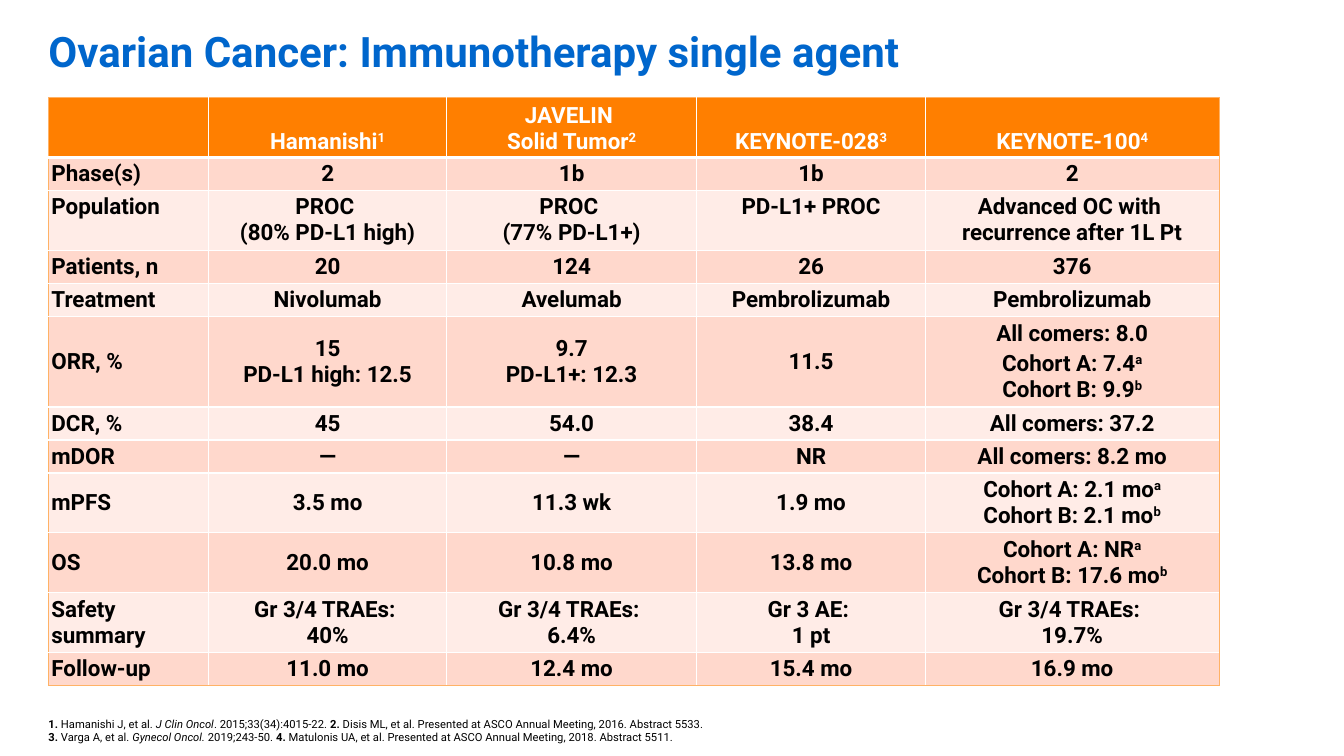
"""Build the slide on single-agent immunotherapy trials in ovarian cancer."""
from dataclasses import dataclass

import lxml.etree
import pptx
import pptx.dml.color
import pptx.enum.text
import pptx.oxml.ns
import pptx.util
from pptx.dml.color import RGBColor
from pptx.enum.text import MSO_ANCHOR, PP_ALIGN
from pptx.util import Inches, Pt

BLUE = RGBColor(0x00, 0x66, 0xCC)
ORANGE = RGBColor(0xFF, 0x7F, 0x00)
LIGHT_ORANGE = RGBColor(0xFF, 0xB2, 0x66)
PINK = RGBColor(0xFF, 0xD8, 0xCC)
PALE_PINK = RGBColor(0xFF, 0xEC, 0xE7)
WHITE = RGBColor(0xFF, 0xFF, 0xFF)
BLACK = RGBColor(0x00, 0x00, 0x00)
FONT = "Roboto"
MARGIN = 0.48
COL_WIDTHS = (1.59, 2.36, 2.48, 2.27, 2.91)


@dataclass(frozen=True)
class Span:
    text: str
    bold: bool = False
    italic: bool = False
    raised: bool = False


@dataclass(frozen=True)
class Row:
    height: float
    cells: tuple[str, ...]
    anchor: MSO_ANCHOR = MSO_ANCHOR.MIDDLE


@dataclass(frozen=True)
class Box:
    left: float
    top: float
    width: float
    height: float
    anchor: MSO_ANCHOR


@dataclass(frozen=True)
class Border:
    color: RGBColor
    width: float


INNER = Border(WHITE, 1)
OUTER = Border(LIGHT_ORANGE, 0.5)
HEADER_RULE = Border(WHITE, 3)

ROWS = (
    Row(0.54, ("", "Hamanishi|1", "JAVELIN \nSolid Tumor|2", "KEYNOTE-028|3",
               "KEYNOTE-100|4"), MSO_ANCHOR.BOTTOM),
    Row(0.31, ("Phase(s)", "2", "1b", "1b", "2"), MSO_ANCHOR.TOP),
    Row(0.54, ("Population", "PROC \n(80% PD-L1 high)", "PROC \n(77% PD-L1+)",
               "PD-L1+ PROC", "Advanced OC with \nrecurrence after 1L Pt"), MSO_ANCHOR.TOP),
    Row(0.31, ("Patients, n", "20", "124", "26", "376")),
    Row(0.31, ("Treatment", "Nivolumab", "Avelumab", "Pembrolizumab", "Pembrolizumab")),
    Row(0.83, ("ORR, %", "15\nPD-L1 high: 12.5", "9.7\nPD-L1+: 12.3", "11.5",
               "All comers: 8.0¶Cohort A: 7.4|a\n|Cohort B: 9.9|b")),
    Row(0.31, ("DCR, %", "45", "54.0", "38.4", "All comers: 37.2")),
    Row(0.31, ("mDOR", "—", "—", "NR", "All comers: 8.2 mo")),
    Row(0.54, ("mPFS", "3.5 mo", "11.3 wk", "1.9 mo",
               "Cohort A: 2.1 mo|a\n|Cohort B: 2.1 mo|b")),
    Row(0.54, ("OS", "20.0 mo", "10.8 mo", "13.8 mo",
               "Cohort A: NR|a\n|Cohort B: 17.6 mo|b")),
    Row(0.54, ("Safety summary", "Gr 3/4 TRAEs: \n40%", "Gr 3/4 TRAEs: \n6.4%",
               "Gr 3 AE: \n1 pt", "Gr 3/4 TRAEs: \n19.7%")),
    Row(0.31, ("Follow-up", "11.0 mo", "12.4 mo", "15.4 mo", "16.9 mo")),
)

REFERENCES = (
    Span("1. ", bold=True),
    Span("Hamanishi J, et al. "),
    Span("J Clin Oncol", italic=True),
    Span(". 2015;33(34):4015-22. "),
    Span("2. ", bold=True),
    Span("Disis ML, et al. Presented at ASCO Annual Meeting, 2016. Abstract 5533. \n"),
    Span("3. ", bold=True),
    Span("Varga A, et al. "),
    Span("Gynecol Oncol. ", italic=True),
    Span("2019;243-50. "),
    Span("4. ", bold=True),
    Span("Matulonis UA, et al. Presented at ASCO Annual Meeting, 2018. Abstract 5511."),
)


def write_spans(p, spans: tuple[Span, ...], size: float, color: RGBColor) -> None:
    for span in spans:
        for i, line in enumerate(span.text.split("\n")):
            if i:
                p.add_line_break()
            if not line:
                continue
            r = p.add_run()
            r.text = line
            r.font.name, r.font.size = FONT, Pt(size)
            r.font.bold, r.font.italic = span.bold, span.italic
            r.font.color.rgb = color
            if span.raised:
                r.font._element.set("baseline", "30000")
    for br in p._p.findall(pptx.oxml.ns.qn("a:br")):
        lxml.etree.SubElement(br, pptx.oxml.ns.qn("a:rPr"), sz=str(int(size * 100)))


def marked_spans(text: str) -> tuple[Span, ...]:
    return tuple(Span(part, bold=True, raised=i % 2 == 1)
                 for i, part in enumerate(text.split("|")))


def set_border(cell, side: str, border: Border) -> None:
    qn = pptx.oxml.ns.qn
    ln = lxml.etree.SubElement(cell._tc.get_or_add_tcPr(), qn(f"a:ln{side}"),
                               w=str(Pt(border.width)))
    fill = lxml.etree.SubElement(ln, qn("a:solidFill"))
    lxml.etree.SubElement(fill, qn("a:srgbClr"), val=str(border.color))


def fill_cell(cell, row: int, col: int) -> None:
    header, last_row = row == 0, row == len(ROWS) - 1
    bottom = HEADER_RULE if header else OUTER if last_row else INNER
    top = OUTER if header else HEADER_RULE if row == 1 else INNER
    set_border(cell, "L", OUTER if col == 0 else INNER)
    set_border(cell, "R", OUTER if col == len(COL_WIDTHS) - 1 else INNER)
    set_border(cell, "T", top)
    set_border(cell, "B", bottom)
    cell.fill.solid()
    cell.fill.fore_color.rgb = ORANGE if header else PINK if row % 2 else PALE_PINK
    cell.margin_left = cell.margin_right = Inches(0.03)
    cell.margin_top = cell.margin_bottom = Inches(0.03)
    cell.vertical_anchor = ROWS[row].anchor
    tf = cell.text_frame
    for i, text in enumerate(ROWS[row].cells[col].split("¶")):
        p = tf.add_paragraph() if i else tf.paragraphs[0]
        p.alignment = PP_ALIGN.CENTER if col else PP_ALIGN.LEFT
        p.space_before = Pt(3)
        write_spans(p, marked_spans(text), 16, WHITE if header else BLACK)


def add_trial_table(s) -> None:
    table = s.shapes.add_table(len(ROWS), len(COL_WIDTHS), Inches(MARGIN), Inches(0.97),
                               Inches(sum(COL_WIDTHS)),
                               Inches(sum(row.height for row in ROWS))).table
    for col, width in enumerate(COL_WIDTHS):
        table.columns[col].width = Inches(width)
    for row, content in enumerate(ROWS):
        table.rows[row].height = Inches(content.height)
        for col in range(len(COL_WIDTHS)):
            fill_cell(table.cell(row, col), row, col)


def add_text(s, box: Box, spans: tuple[Span, ...], size: float, color: RGBColor) -> None:
    sp = s.shapes.add_textbox(Inches(box.left), Inches(box.top),
                              Inches(box.width), Inches(box.height))
    tf = sp.text_frame
    tf.word_wrap = True
    tf.vertical_anchor = box.anchor
    tf.margin_left = tf.margin_right = tf.margin_top = tf.margin_bottom = 0
    write_spans(tf.paragraphs[0], spans, size, color)


def main() -> None:
    prs = pptx.Presentation()
    prs.slide_width, prs.slide_height = Inches(13.33), Inches(7.5)
    s = prs.slides.add_slide(prs.slide_layouts[6])
    add_text(s, Box(MARGIN, 0, 12.49, 1, MSO_ANCHOR.MIDDLE),
             (Span("Ovarian Cancer: Immunotherapy single agent", bold=True),), 30, BLUE)
    add_trial_table(s)
    add_text(s, Box(MARGIN, 7.11, 7.65, 0.27, MSO_ANCHOR.BOTTOM), REFERENCES, 8, BLACK)
    prs.save("out.pptx")


if __name__ == "__main__":
    main()
